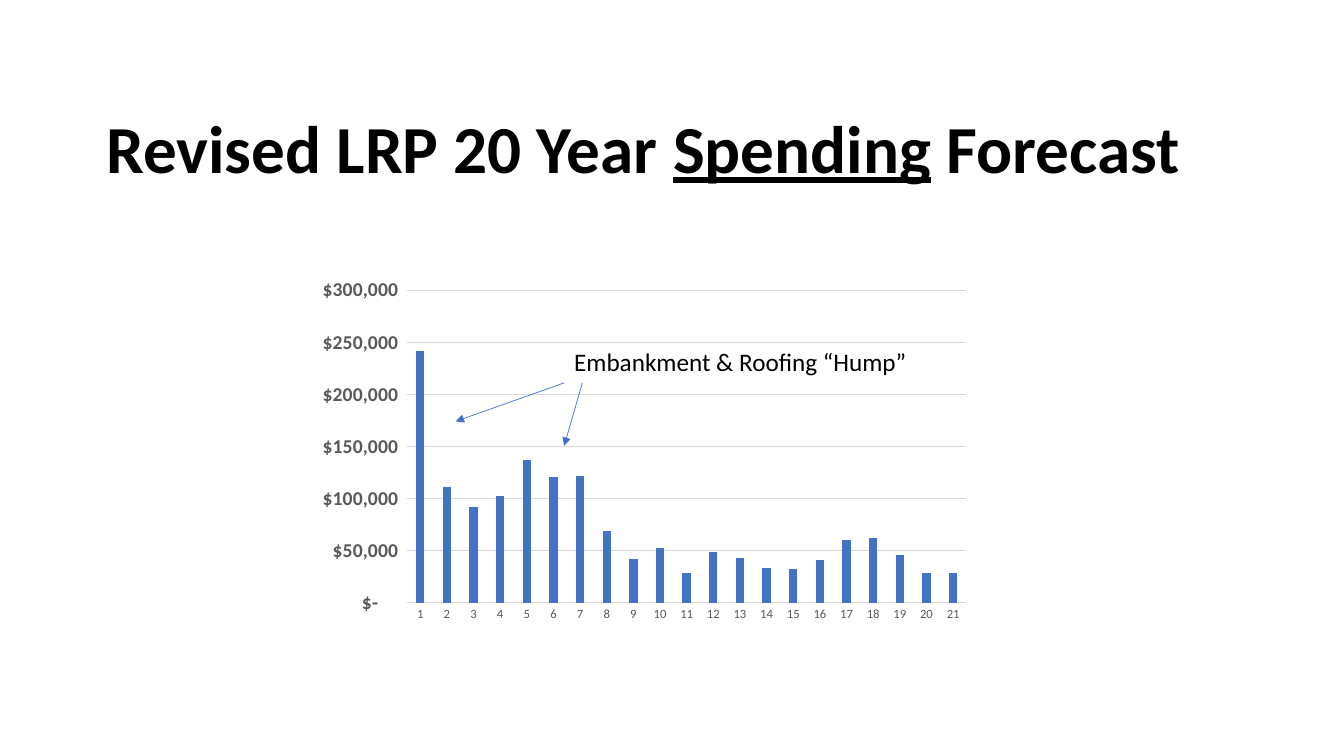
"""Builds a slide with a 20 year spending forecast column chart."""
from lxml import etree
from pptx import Presentation
from pptx.chart.data import CategoryChartData
from pptx.dml.color import RGBColor
from pptx.enum.chart import XL_CHART_TYPE, XL_TICK_MARK
from pptx.enum.shapes import MSO_CONNECTOR
from pptx.enum.text import MSO_ANCHOR
from pptx.oxml.ns import qn
from pptx.util import Pt

COLUMNS = XL_CHART_TYPE.COLUMN_CLUSTERED
NO_TICKS = XL_TICK_MARK.NONE
STRAIGHT = MSO_CONNECTOR.STRAIGHT
MIDDLE = MSO_ANCHOR.MIDDLE

FONT = "Calibri"
BLACK, GREY, LIGHT_GREY, BLUE = "000000", "595959", "D9D9D9", "4472C4"
DOLLARS = r'_("$"* #,##0_);_("$"* \(#,##0\);_("$"* "-"??_);_(@_)'
SPENDING = [242000, 111000, 92000, 102000, 137000, 121000, 122000,
            69000, 42000, 52000, 28000, 49000, 43000, 33000,
            32000, 41000, 60000, 62000, 46000, 28000, 28000]


def color(hex_string):
    return RGBColor.from_string(hex_string)


def style_font(font, size, hex_string, bold=False):
    font.name = FONT
    font.size = Pt(size)
    font.bold = bold
    font.color.rgb = color(hex_string)


presentation = Presentation()
presentation.slide_width = Pt(960)
presentation.slide_height = Pt(540)
slide = presentation.slides.add_slide(presentation.slide_layouts[6])

title = slide.shapes.add_textbox(Pt(69), Pt(56), Pt(828), Pt(104.5))
title.text_frame.word_wrap = True
title.text_frame.vertical_anchor = MIDDLE
paragraph = title.text_frame.paragraphs[0]
paragraph.line_spacing = 0.9
for words in ("Revised LRP 20 Year ", "Spending", " Forecast"):
    run = paragraph.add_run()
    run.text = words
    style_font(run.font, 48, BLACK, bold=True)
    run.font.underline = words == "Spending"

chart_data = CategoryChartData()
chart_data.categories = [str(year) for year in range(1, len(SPENDING) + 1)]
chart_data.add_series("Spending", SPENDING)
chart = slide.shapes.add_chart(
    COLUMNS, Pt(217.5), Pt(193.5), Pt(482.5), Pt(255.5), chart_data).chart
chart.has_title = False
chart.has_legend = False
style_font(chart.font, 10, BLACK)

plot = chart.plots[0]
plot.vary_by_categories = False
plot.gap_width = 219
plot.overlap = -27
fill = plot.series[0].format.fill
fill.solid()
fill.fore_color.rgb = color(BLUE)

year_axis, dollar_axis = chart.category_axis, chart.value_axis
for axis in (year_axis, dollar_axis):
    axis.major_tick_mark = NO_TICKS
    axis.minor_tick_mark = NO_TICKS
style_font(year_axis.tick_labels.font, 9, GREY)
style_font(dollar_axis.tick_labels.font, 14, GREY, bold=True)
for line in (year_axis.format.line, dollar_axis.major_gridlines.format.line):
    line.color.rgb = color(LIGHT_GREY)
    line.width = Pt(0.75)
dollar_axis.format.line.fill.background()
dollar_axis.minimum_scale = 0
dollar_axis.maximum_scale = 300000
dollar_axis.major_unit = 50000
dollar_axis.tick_labels.number_format = DOLLARS
dollar_axis.tick_labels.number_format_is_linked = False

callout = slide.shapes.add_textbox(Pt(403), Pt(244), Pt(275), Pt(29))
callout.text_frame.word_wrap = True
callout.text_frame.text = "Embankment & Roofing “Hump”"
style_font(callout.text_frame.paragraphs[0].runs[0].font, 18, BLACK)

for start_x, end_x, end_y in ((403, 325.5, 301), (416, 403, 318.5)):
    arrow = slide.shapes.add_connector(
        STRAIGHT, Pt(start_x), Pt(273.5), Pt(end_x), Pt(end_y))
    arrow.line.color.rgb = color(BLUE)
    arrow.line.width = Pt(0.5)
    etree.SubElement(arrow.line._get_or_add_ln(), qn("a:tailEnd"), type="triangle")
    etree.SubElement(arrow._element.spPr, qn("a:effectLst"))

presentation.save("out.pptx")
